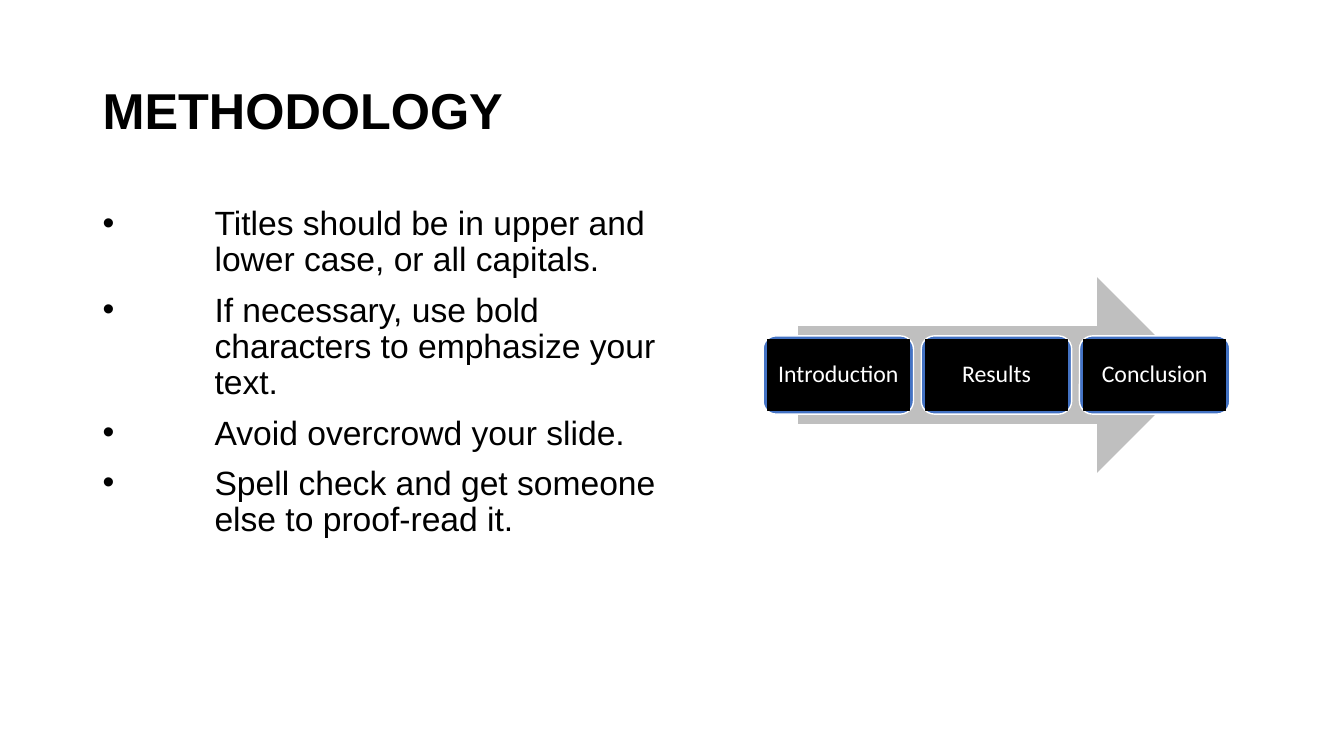
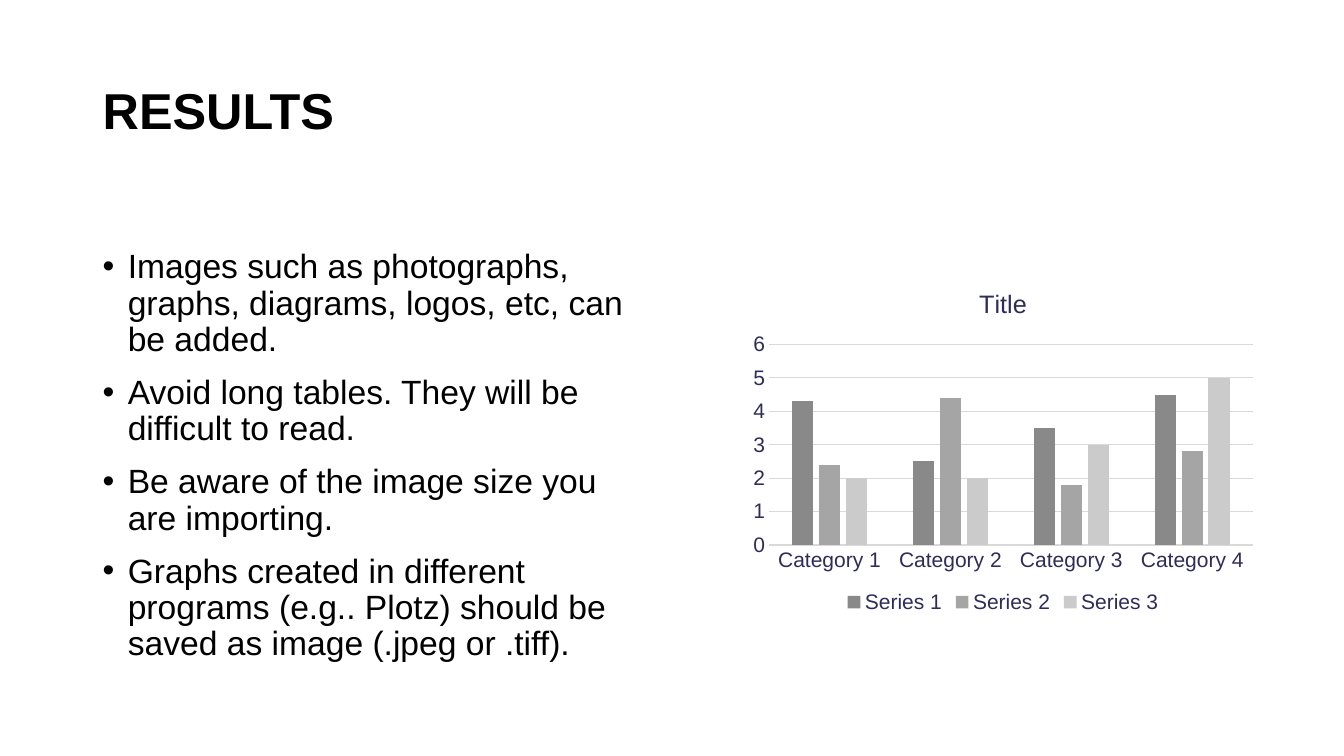
from lxml import etree
from pptx import Presentation
from pptx import util as u
from pptx.chart import data
from pptx.dml.color import RGBColor
from pptx.enum import chart as ch, shapes, text
from pptx.oxml import ns

BLACK = RGBColor(0x00, 0x00, 0x00)
WHITE = RGBColor(0xFF, 0xFF, 0xFF)
BLUE = RGBColor(0x43, 0x72, 0xC3)
SILVER = RGBColor(0xBF, 0xBF, 0xBF)
RULE = RGBColor(0xD9, 0xD9, 0xD9)
INK = RGBColor(0x2F, 0x2D, 0x55)
GREYS = [RGBColor(0x89, 0x89, 0x89), RGBColor(0xA5, 0xA5, 0xA5), RGBColor(0xCB, 0xCB, 0xCB)]

WIDE, HIGH = u.Inches(13.33), u.Inches(7.5)
HEAD = {"name": "Arial", "size": u.Pt(36), "bold": True}
BODY = {"name": "Arial", "size": u.Pt(24)}
CARD = {"name": "Calibri", "size": u.Pt(17)}
AXIS = {"name": "Arial", "size": u.Pt(15)}
NAME = {"name": "Arial", "size": u.Pt(18), "bold": False}

TITLE = (6.9, 5.33, 86.25, 19.33)
STEPS = ["Introduction", "Results", "Conclusion"]
METHOD = [
    "Titles should be in upper and lower case, or all capitals.",
    "If necessary, use bold characters to emphasize your text.",
    "Avoid overcrowd your slide.",
    "Spell check and get someone else to proof-read it.",
]
RESULT = [
    "Images such as photographs, graphs, diagrams, logos, etc, can be added.",
    "Avoid long tables. They will be difficult to read.",
    "Be aware of the image size you are importing.",
    "Graphs created in different programs (e.g.. Plotz) should be saved as image (.jpeg or .tiff).",
]
CATS = [f"Category {n}" for n in range(1, 5)]
VALUES = [(4.3, 2.5, 3.5, 4.5), (2.4, 4.4, 1.8, 2.8), (2, 2, 3, 5)]


def area(box):
    """Turn percentages of the slide into lengths."""
    return [int(share * side / 100) for share, side in zip(box, (WIDE, HIGH) * 2)]


def put(item, vals):
    """Set each attribute in vals on item."""
    for key, val in vals.items():
        setattr(item, key, val)


def style(font, vals, color):
    """Format a font and colour it."""
    put(font, vals)
    font.color.rgb = color


def write(frame, lines, look, color=BLACK, gap=0, hang=0, **form):
    """Fill a text frame, with hanging bullets when hang is given."""
    frame.word_wrap = True
    for i, line in enumerate(lines):
        para = frame.paragraphs[0] if i == 0 else frame.add_paragraph()
        para.text = line
        if hang:
            bullet(para, u.Inches(hang))
        put(para, {"line_spacing": 0.9, **form})
        if i and gap:
            para.space_before = u.Pt(gap)
        style(para.runs[0].font, look, color)


def bullet(para, hang):
    """Give a paragraph a black round bullet."""
    props = para._p.get_or_add_pPr()
    props.set("marL", str(hang))
    props.set("indent", str(-hang))
    tint = etree.SubElement(props, ns.qn("a:buClr"))
    etree.SubElement(tint, ns.qn("a:srgbClr"), val=str(BLACK))
    etree.SubElement(props, ns.qn("a:buFont"), typeface="Arial")
    etree.SubElement(props, ns.qn("a:buChar"), char="•")


def page(deck, head, lines, box, gap, hang):
    """Add a slide with its title and bullet list."""
    slide = deck.slides.add_slide(deck.slide_layouts[6])
    title = slide.shapes.add_textbox(*area(TITLE)).text_frame
    title.vertical_anchor = text.MSO_ANCHOR.MIDDLE
    write(title, [head], HEAD)
    body = slide.shapes.add_textbox(*area(box)).text_frame
    write(body, lines, BODY, gap=gap, hang=hang)
    return slide


def block(group, kind, box, fill, line=None, width=1):
    """Draw a flat filled shape."""
    shape = group.add_shape(kind, *map(int, box))
    shape.shadow.inherit = False
    shape.fill.solid()
    shape.fill.fore_color.rgb = fill
    if line is None:
        shape.line.fill.background()
    else:
        shape.line.color.rgb = line
        shape.line.width = u.Pt(width)
    return shape


def flow(slide, box, steps):
    """Draw equal step cards along a wide arrow."""
    x, y, w, h = area(box)
    kind = shapes.MSO_SHAPE
    group = slide.shapes.add_group_shape().shapes
    block(group, kind.RIGHT_ARROW, (x + 0.075 * w, y, 0.85 * w, h), SILVER)
    pad = 0.02 * h
    pitch = (w + 2 * pad) / len(steps)
    wide, high, top = pitch - 2 * pad, 0.4 * h, y + 0.3 * h
    for i, step in enumerate(steps):
        left = x + i * pitch
        block(group, kind.ROUNDED_RECTANGLE, (left, top, wide, high), BLUE, WHITE)
        inner = (left + pad, top + pad, wide - 2 * pad, high - 2 * pad)
        frame = block(group, kind.RECTANGLE, inner, BLACK, BLACK, 0.75).text_frame
        sides = ("left", "top", "right", "bottom")
        put(frame, {f"margin_{side}": u.Inches(0.07) for side in sides})
        frame.vertical_anchor = text.MSO_ANCHOR.MIDDLE
        write(frame, [step], CARD, WHITE, alignment=text.PP_ALIGN.CENTER)


def graph(slide, box):
    """Add the clustered column chart."""
    table = data.CategoryChartData()
    table.categories = CATS
    for i, vals in enumerate(VALUES, 1):
        table.add_series(f"Series {i}", vals)
    kind = ch.XL_CHART_TYPE.COLUMN_CLUSTERED
    chart = slide.shapes.add_chart(kind, *area(box), table).chart
    style(chart.font, AXIS, INK)
    chart.has_title = True
    title = chart.chart_title.text_frame
    title.text = "Title"
    style(title.paragraphs[0].runs[0].font, NAME, INK)
    chart.has_legend = True
    put(chart.legend, {"position": ch.XL_LEGEND_POSITION.BOTTOM, "include_in_layout": False})
    style(chart.legend.font, AXIS, INK)
    plot = chart.plots[0]
    put(plot, {"gap_width": 219, "overlap": -27, "vary_by_categories": False})
    for series, grey in zip(plot.series, GREYS):
        series.format.fill.solid()
        series.format.fill.fore_color.rgb = grey
    cat, val = chart.category_axis, chart.value_axis
    for axis in (cat, val):
        axis.major_tick_mark = axis.minor_tick_mark = ch.XL_TICK_MARK.NONE
        style(axis.tick_labels.font, AXIS, INK)
    val.format.line.fill.background()
    val.has_major_gridlines = True
    for line in (cat.format.line, val.major_gridlines.format.line):
        line.color.rgb = RULE
        line.width = u.Pt(0.75)


def main():
    """Build and save the deck."""
    deck = Presentation()
    put(deck, {"slide_width": WIDE, "slide_height": HIGH})
    slide = page(deck, "METHODOLOGY", METHOD, (6.9, 26.67, 43.13, 63.47), 10, 1.11)
    flow(slide, (56.78, 36.67, 34.73, 25.87), STEPS)
    slide = page(deck, "RESULTS", RESULT, (6.9, 32.4, 42.3, 59.6), 12, 0.25)
    graph(slide, (55.28, 35.73, 38.7, 46))
    deck.save("out.pptx")


if __name__ == "__main__":
    main()
